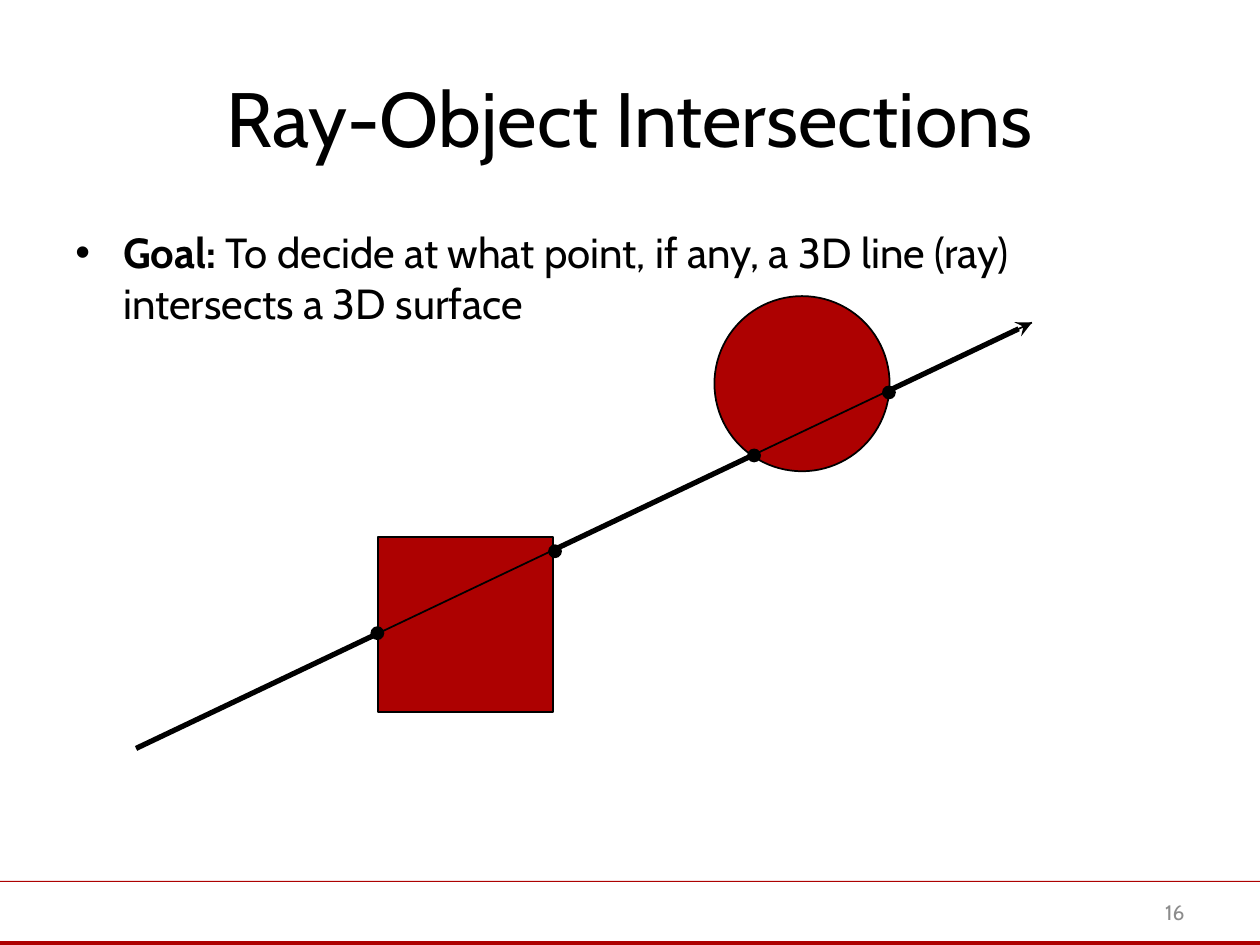
from lxml import etree
from pptx import Presentation, util as u
from pptx.dml.color import RGBColor
from pptx.enum import shapes, text
from pptx.oxml.ns import qn

RED = RGBColor(0xAD, 0x01, 0x01)
BLACK = RGBColor(0, 0, 0)
GRAY = RGBColor(0x8C, 0x8C, 0x8C)
KIND = shapes.MSO_SHAPE

deck = Presentation()
deck.slide_width, deck.slide_height = u.Inches(10), u.Inches(7.5)
slide = deck.slides.add_slide(deck.slide_layouts[5])
W, H = deck.slide_width, deck.slide_height
items = slide.shapes


def draw(kind, box, fill, edge=None):
    """Add a flat shape; box is left, top, width, height in inches."""
    item = items.add_shape(kind, *map(u.Inches, box))
    item.shadow.inherit = False
    item.fill.solid()
    item.fill.fore_color.rgb = fill
    if edge:
        item.line.color.rgb = BLACK
        item.line.width = u.Pt(edge)
    else:
        item.line.fill.background()


def style(part, size, color):
    part.font.name = "Cabin"
    part.font.size = u.Pt(size)
    part.font.color.rgb = color


# Footer rules
for top, thick in ((6.99, 0.01), (7.47, 0.03)):
    draw(KIND.RECTANGLE, (0, top, 10, thick), RED)

# Title
title = items.title
title.left, title.top = int(W * 0.05), int(H * 0.04)
title.width, title.height = int(W * 0.9), u.Inches(1.25)
title.text_frame.text = "Ray-Object Intersections"
title.text_frame.vertical_anchor = text.MSO_ANCHOR.MIDDLE
para = title.text_frame.paragraphs[0]
para.alignment = text.PP_ALIGN.CENTER
style(para.runs[0], 44, BLACK)

# Goal bullet
body = items.add_textbox(int(W * 0.05), u.Inches(1.75), int(W * 0.9), int(H * 0.66))
body.text_frame.word_wrap = True
para = body.text_frame.paragraphs[0]
props = para._p.get_or_add_pPr()
props.set("marL", str(u.Inches(0.38)))
props.set("indent", str(-u.Inches(0.38)))
etree.SubElement(props, qn("a:buFont"), typeface="Arial")
etree.SubElement(props, qn("a:buChar"), char="•")
for words, bold in (
    ("Goal:", True),
    (" To decide at what point, if any, a 3D line (ray) intersects a 3D surface", False),
):
    run = para.add_run()
    run.text = words
    run.font.bold = bold
    style(run, 24, BLACK)

# The thick ray passes behind the objects, the thin one in front
for width in (3, 1):
    ray = items.add_connector(
        shapes.MSO_CONNECTOR.STRAIGHT, *map(u.Inches, (8.19, 2.56, 1.08, 5.94)))
    ray.line.color.rgb = BLACK
    ray.line.width = u.Pt(width)
    etree.SubElement(ray._element.spPr, qn("a:effectLst"))
    if width == 3:
        etree.SubElement(ray.line._get_or_add_ln(), qn("a:headEnd"), type="stealth")
        side = 1.39
        draw(KIND.RECTANGLE, (3, 4.26, side, side), RED, 1)
        draw(KIND.OVAL, (5.67, 2.35, side, side), RED, 1)
        for left, top in ((4.35, 4.32), (5.93, 3.56), (7, 3.06), (2.94, 4.97)):
            draw(KIND.OVAL, (left, top, 0.11, 0.11), BLACK)

# Slide number
page = items.add_textbox(*map(u.Inches, (7.17, 7.04, 2.33, 0.4)))
page.text_frame.word_wrap = True
page.text_frame.vertical_anchor = text.MSO_ANCHOR.MIDDLE
page.text_frame.text = "16"
para = page.text_frame.paragraphs[0]
para.alignment = text.PP_ALIGN.RIGHT
style(para.runs[0], 12, GRAY)

deck.save("out.pptx")
